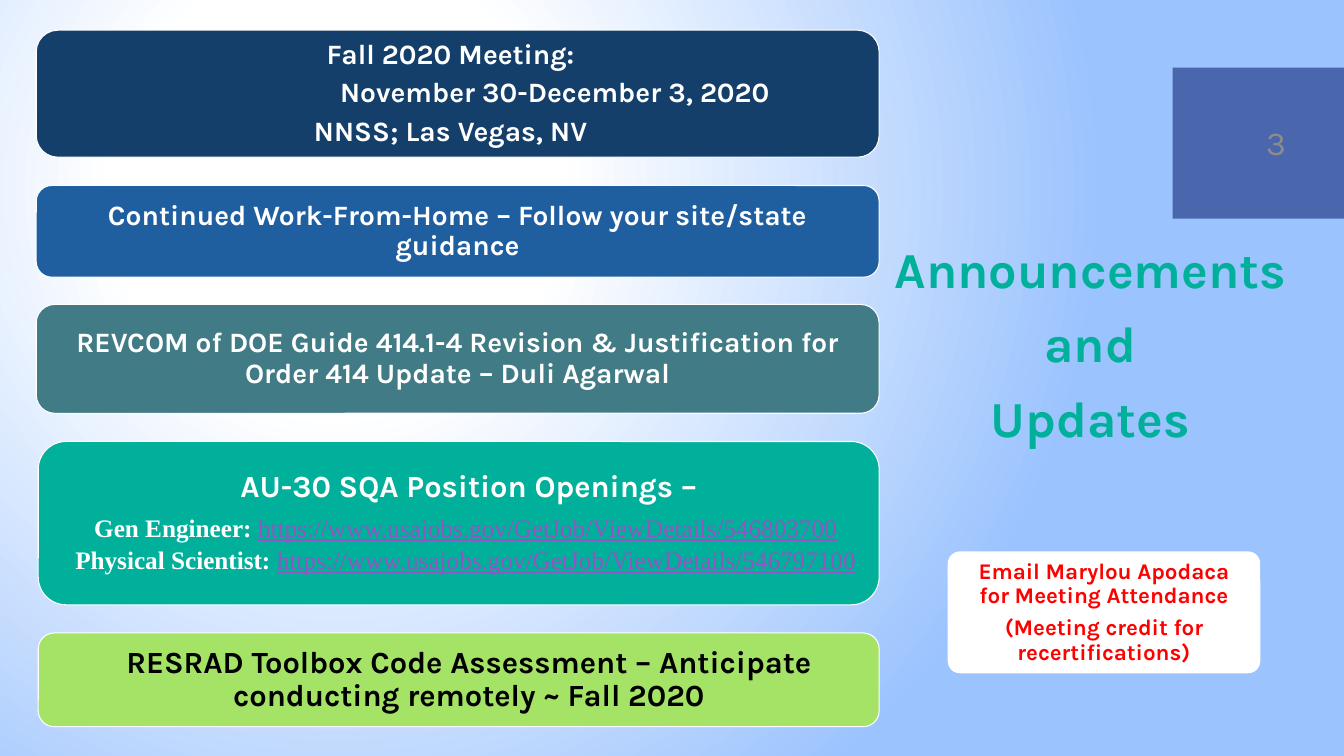
from dataclasses import dataclass

from lxml import etree
from pptx import Presentation
from pptx import util as u
from pptx.dml.color import RGBColor
from pptx.enum import shapes, text
from pptx.oxml import ns

WHITE = RGBColor(0xFF, 0xFF, 0xFF)
BLACK = RGBColor(0, 0, 0)
RED = RGBColor(0xFF, 0, 0)
SKY = RGBColor(0x9B, 0xC3, 0xFE)
NAVY = RGBColor(0x14, 0x3F, 0x6A)
BLUE = RGBColor(0x1F, 0x5F, 0xA0)
SLATE = RGBColor(0x41, 0x7B, 0x85)
TEAL = RGBColor(0x00, 0xB0, 0x9B)
LIME = RGBColor(0xA5, 0xE3, 0x67)
INDIGO = RGBColor(0x4A, 0x66, 0xAC)
GREY = RGBColor(0x8C, 0x8C, 0x8C)
PURPLE = RGBColor(0x94, 0x54, 0xC3)

KARLA = "Karla"
TIMES = "Times New Roman"
CENTER = text.PP_ALIGN.CENTER
INSET = 0.15


@dataclass
class Line:
    words: str
    size: float = 20
    color: RGBColor = WHITE
    face: str = KARLA
    bold: bool = True
    align: text.PP_ALIGN = CENTER
    link: str = ""
    left: float = 0
    right: float = 0
    space: float = 0.9
    before: float = 0
    after: float = 6


@dataclass
class Card:
    left: float
    top: float
    width: float
    height: float
    fill: RGBColor
    lines: list[Line]
    curve: float = 0.17
    edge: bool = True


def write(frame, lines: list[Line]) -> None:
    frame.word_wrap = True
    for i, line in enumerate(lines):
        para = frame.paragraphs[0] if i == 0 else frame.add_paragraph()
        props = para._p.get_or_add_pPr()
        for key, inches in (("marL", line.left), ("marR", line.right)):
            if inches:
                props.set(key, str(u.Inches(inches)))
        para.alignment = line.align
        para.line_spacing = line.space
        para.space_after = u.Pt(line.after)
        if i:
            para.space_before = u.Pt(line.before)
        font = para.font
        font.name, font.size, font.bold = line.face, u.Pt(line.size), line.bold
        font.color.rgb = line.color
        para.add_run().text = line.words
        if line.link:
            run = para.add_run()
            run.text = line.link
            run.font.bold, run.font.underline = False, True
            run.font.color.rgb = PURPLE


def add_box(slide, kind, left: float, top: float, width: float,
            height: float, fill: RGBColor):
    box = slide.shapes.add_shape(
        kind, *map(u.Inches, (left, top, width, height)))
    box.shadow.inherit = False
    box.fill.solid()
    box.fill.fore_color.rgb = fill
    box.line.fill.background()
    return box


def add_card(slide, card: Card) -> None:
    box = add_box(slide, shapes.MSO_SHAPE.ROUNDED_RECTANGLE, card.left,
                  card.top, card.width, card.height, card.fill)
    box.adjustments[0] = card.curve
    if card.edge:
        box.line.color.rgb = WHITE
        box.line.width = u.Pt(0.75)
    frame = box.text_frame
    frame.vertical_anchor = text.MSO_ANCHOR.MIDDLE
    # A round corner already insets the text by 0.29 of its radius.
    inset = u.Inches(INSET - 0.29 * card.curve * card.height)
    frame.margin_left = frame.margin_right = inset
    frame.margin_top = frame.margin_bottom = inset
    write(frame, card.lines)


def add_text(slide, left: float, top: float, width: float, height: float,
             lines: list[Line], anchor=text.MSO_ANCHOR.TOP) -> None:
    box = slide.shapes.add_textbox(
        *map(u.Inches, (left, top, width, height)))
    box.text_frame.vertical_anchor = anchor
    write(box.text_frame, lines)


def paint_back(slide) -> None:
    """Fill the slide with a white glow that fades to sky blue."""
    fill = slide.background.fill
    fill.gradient()
    for stop, place, color in zip(fill.gradient_stops, (0.29, 1),
                                  (WHITE, SKY)):
        stop.position = place
        stop.color.rgb = color
    grad = slide.element.find(".//" + ns.qn("a:gradFill"))
    glow = etree.Element(ns.qn("a:path"), path="circle")
    etree.SubElement(glow, ns.qn("a:fillToRect"),
                     l="50000", t="50000", r="100000", b="100000")
    grad.replace(grad.find(ns.qn("a:lin")), glow)


JOBS = "https://www.usajobs.gov/GetJob/ViewDetails/"

CARDS = [
    Card(0.36, 0.3, 8.36, 1.26, NAVY, [
        Line("Fall 2020 Meeting:", right=0.14),
        Line("November 30-December 3, 2020", left=2.07),
        Line("NNSS; Las Vegas, NV"),
    ]),
    Card(0.36, 1.84, 8.36, 0.91, BLUE, [
        Line("Continued Work-From-Home – Follow your site/state guidance"),
    ]),
    Card(0.36, 3.02, 8.36, 1.08, SLATE, [
        Line("REVCOM of DOE Guide 414.1-4 Revision & Justification for "
             "Order 414 Update – Duli Agarwal"),
    ]),
    Card(0.38, 4.38, 8.34, 1.62, TEAL, [
        Line("AU-30 SQA Position Openings –", 22, left=0.2, after=8),
        Line("Gen Engineer: ", 18, face=TIMES, link=JOBS + "546803700",
             left=0.14, after=4),
        Line("Physical Scientist: ", 18, face=TIMES,
             link=JOBS + "546797100", left=0.14, after=8),
    ]),
    Card(0.38, 6.28, 8.34, 0.93, LIME, [
        Line("RESRAD Toolbox Code Assessment – Anticipate conducting "
             "remotely ~ Fall 2020", 22, BLACK, left=0.2, after=8),
    ]),
    Card(9.4, 5.47, 3.1, 1.21, WHITE, [
        Line("Email Marylou Apodaca for Meeting Attendance", 16, RED),
        Line("(Meeting credit for recertifications)", 16, RED),
    ], curve=0.1, edge=False),
]


def main() -> None:
    deck = Presentation()
    deck.slide_width, deck.slide_height = u.Inches(13.33), u.Inches(7.5)
    slide = deck.slides.add_slide(deck.slide_layouts[6])
    paint_back(slide)
    for card in CARDS:
        add_card(slide, card)
    add_text(slide, 8.65, 2.31, 4.33, 2.92, [
        Line(word, 36, TEAL, space=1, before=10, after=0)
        for word in ("Announcements", "and", "Updates")])
    add_box(slide, shapes.MSO_SHAPE.RECTANGLE, 11.63, 0.67, 1.7, 1.5, INDIGO)
    add_text(slide, 12.46, 1.14, 0.66, 0.54, [
        Line("3", 24, GREY, bold=False, align=text.PP_ALIGN.LEFT,
             space=1, after=0)], text.MSO_ANCHOR.MIDDLE)
    deck.save("out.pptx")


if __name__ == "__main__":
    main()
